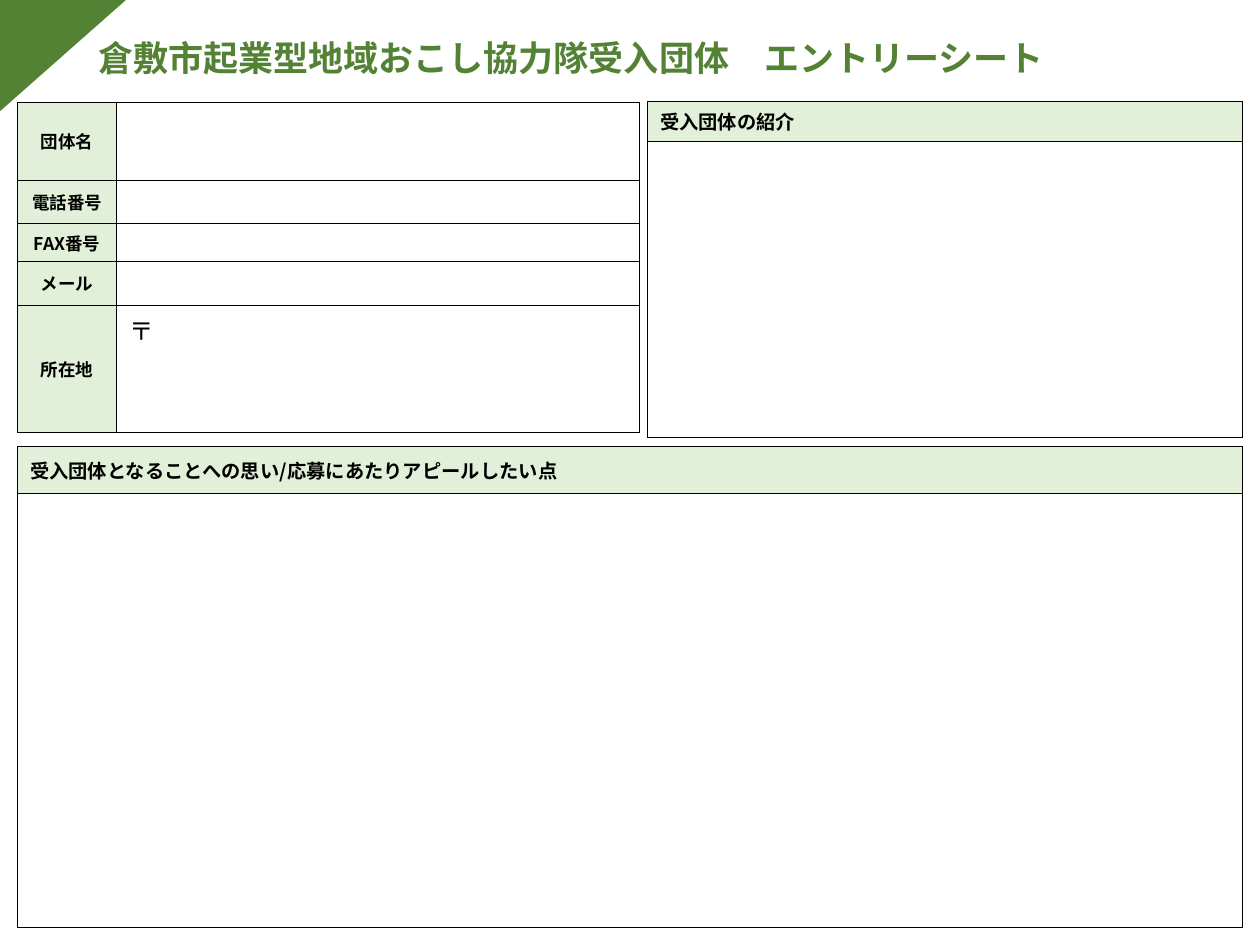
import pptx
import pptx.util
import pptx.dml.color
import pptx.enum.shapes
import pptx.enum.text
import pptx.oxml.ns
import lxml.etree

Pt = pptx.util.Pt
Align = pptx.enum.text.PP_ALIGN
Anchor = pptx.enum.text.MSO_ANCHOR
qn = pptx.oxml.ns.qn

FONT = "Noto Sans CJK JP"
COLORS = {"green": "548235", "pale": "E2F0D9", "white": "FFFFFF", "black": "000000"}


def color(name):
    return pptx.dml.color.RGBColor.from_string(COLORS[name])


def paint(item, name):
    item.fill.solid()
    item.fill.fore_color.rgb = color(name)


def write(frame, text, size=10, bold=True, ink="black", align=Align.LEFT):
    para = frame.paragraphs[0]
    para.alignment = align
    run = para.add_run()
    run.text = text
    font = run.font
    font.size, font.bold, font.name = Pt(size), bold, FONT
    font.color.rgb = color(ink)
    east = lxml.etree.SubElement(font._element, qn("a:ea"))
    east.set("typeface", FONT)


def edge(cell, width=0.5):
    """Draw all four borders; they must come before the cell's fill."""
    props = cell._tc.get_or_add_tcPr()
    for spot, side in enumerate(("lnL", "lnR", "lnT", "lnB")):
        line = lxml.etree.Element(qn("a:" + side), w=str(Pt(width)))
        fill = lxml.etree.SubElement(line, qn("a:solidFill"))
        lxml.etree.SubElement(fill, qn("a:srgbClr"), val=COLORS["black"])
        props.insert(spot, line)


def blank(cell, size=10):
    """Keep an empty cell's line small, so the row keeps its height."""
    para = cell.text_frame.paragraphs[0]._p
    lxml.etree.SubElement(para, qn("a:endParaRPr"), sz=str(size * 100))


def grid(slide, left, top, cols, rows, heads):
    """Add a bordered table; heads maps (row, column) to a label's format."""
    frame = slide.shapes.add_table(len(rows), len(cols), Pt(left), Pt(top),
                                   Pt(sum(cols)), Pt(sum(rows)))
    table = frame.table
    table.first_row = table.horz_banding = False
    for col, width in zip(table.columns, cols):
        col.width = Pt(width)
    for row, height in zip(table.rows, rows):
        row.height = Pt(height)
    for r in range(len(rows)):
        for c in range(len(cols)):
            cell = table.cell(r, c)
            head = heads.get((r, c))
            paint(cell, "pale" if head else "white")
            edge(cell)
            if head:
                cell.vertical_anchor = Anchor.MIDDLE
                write(cell.text_frame, **head)
            elif (r, c) != (4, 1):
                blank(cell)
    return table


def panel(slide, left, top, width, rows, title):
    """Add a titled box to be filled in."""
    grid(slide, left, top, [width], rows, {(0, 0): dict(text=title, size=11)})


def banner(slide, title):
    group = slide.shapes.add_group_shape()
    box = group.shapes.add_textbox(Pt(49), Pt(18.7), Pt(643.7), Pt(28))
    frame = box.text_frame
    frame.word_wrap = True
    frame.vertical_anchor = Anchor.MIDDLE
    write(frame, title, size=20, ink="green")

    # Corner triangle, right angle at the top left
    kind = pptx.enum.shapes.MSO_SHAPE.RIGHT_TRIANGLE
    corner = group.shapes.add_shape(kind, Pt(-0.7), Pt(-0.7), Pt(73.4), Pt(64.8))
    corner.rotation = 180
    corner._element.spPr.find(qn("a:xfrm")).set("flipH", "1")
    corner.shadow.inherit = False
    paint(corner, "green")
    corner.line.fill.background()


def main():
    deck = pptx.Presentation()
    deck.slide_width, deck.slide_height = Pt(720), Pt(540)
    slide = deck.slides.add_slide(deck.slide_layouts[6])

    # Title
    banner(slide, "倉敷市起業型地域おこし協力隊受入団体　エントリーシート")

    # Contact details
    labels = ["団体名", "電話番号", "FAX番号", "メール", "所在地"]
    heads = {(r, 0): dict(text=label, align=Align.CENTER)
             for r, label in enumerate(labels)}
    table = grid(slide, 10, 58.5, [56.7, 298.8], [44.6, 24.6, 21.8, 25, 72.6], heads)
    write(table.cell(4, 1).text_frame, "〒", size=14, bold=False)

    # Free-text panels
    panel(slide, 370, 57.8, 340, [23, 169.2], "受入団体の紹介")
    panel(slide, 10, 255, 700, [27, 248],
          "受入団体となることへの思い/応募にあたりアピールしたい点")

    deck.save("out.pptx")


if __name__ == "__main__":
    main()
